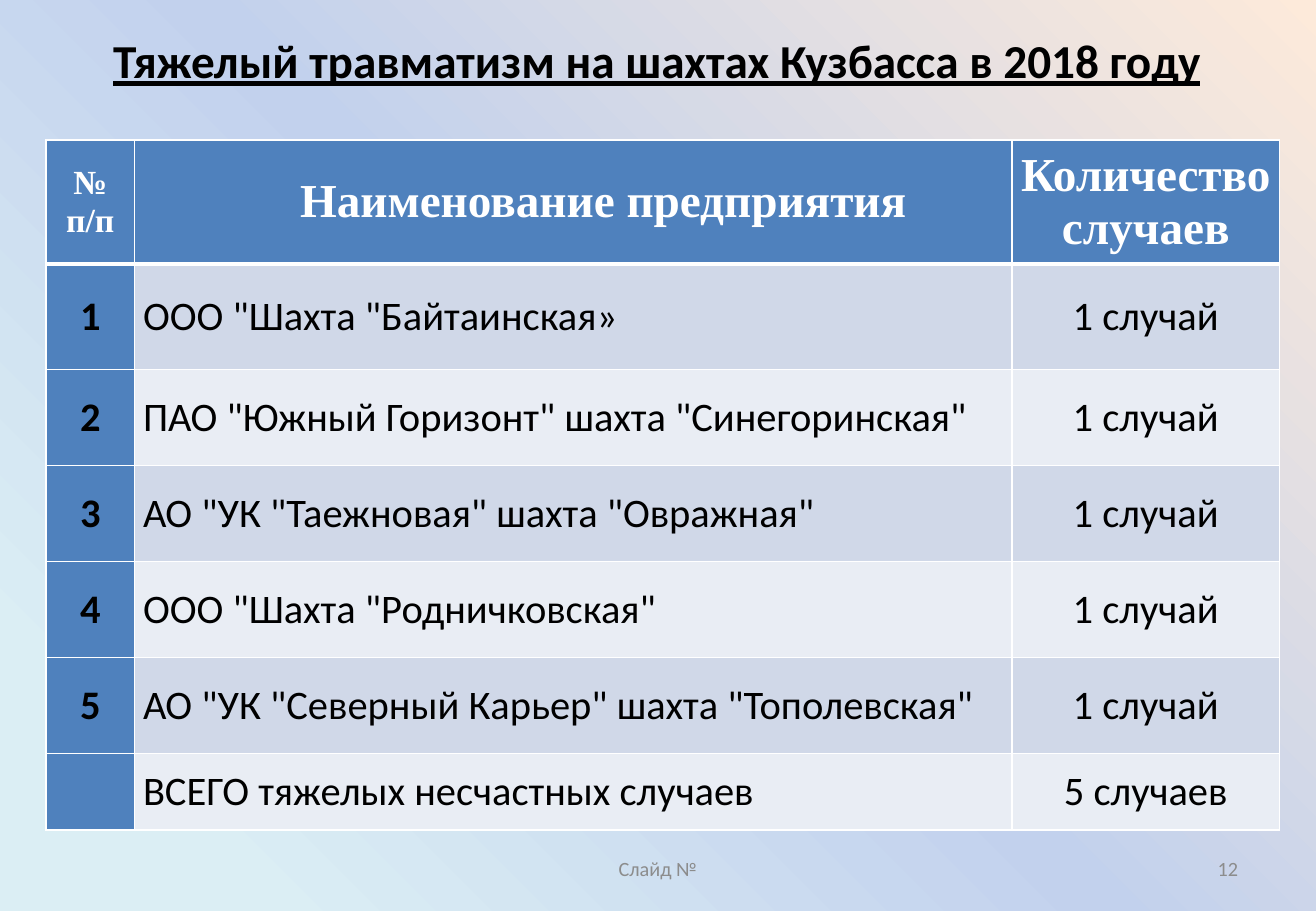
from copy import deepcopy
from dataclasses import dataclass

from lxml import etree
from pptx import Presentation
from pptx.dml.color import RGBColor
from pptx.enum import text as text_enum
from pptx.oxml import ns
from pptx.util import Pt

ALIGN = text_enum.PP_ALIGN
MIDDLE = text_enum.MSO_ANCHOR.MIDDLE


@dataclass(frozen=True)
class Theme:
    body_font: str = "Calibri"
    header_font: str = "Times New Roman"
    black: str = "000000"
    white: str = "FFFFFF"
    grey: str = "8C8C8C"
    blue: str = "4F81BD"
    bands: tuple[str, str] = ("D0D8E8", "E9EDF4")
    background: tuple[tuple[float, str], ...] = (
        (0.12, "DBEEF4"), (0.5, "C2D1ED"), (1.0, "FDEADA"))
    title_size: float = 28
    number_header_size: float = 20
    body_size: float = 24
    footer_size: float = 12


@dataclass(frozen=True)
class Box:
    left: float
    top: float
    width: float
    height: float

    def lengths(self) -> tuple[Pt, Pt, Pt, Pt]:
        return Pt(self.left), Pt(self.top), Pt(self.width), Pt(self.height)


@dataclass(frozen=True)
class Record:
    number: str
    company: str
    cases: str


@dataclass(frozen=True)
class FooterItem:
    text: str
    box: Box
    align: ALIGN


THEME = Theme()
TITLE_BOX = Box(38.2, 20.9, 702, 62.6)
TABLE_BOX = Box(27.2, 83, 731.2, 409)
COLUMN_WIDTHS = (52.6, 520, 158.6)
ROW_HEIGHTS = (73.4, 62.6, 56.9, 56.9, 56.9, 56.9, 45.4)
HEADERS = (("№ п/п", THEME.number_header_size, 0),
           ("Наименование предприятия", THEME.title_size, 35.4),
           ("Количество случаев", THEME.title_size, 0))
RECORDS = (
    Record("1", 'ООО "Шахта "Байтаинская»', "1 случай"),
    Record("2", 'ПАО "Южный Горизонт" шахта "Синегоринская"', "1 случай"),
    Record("3", 'АО "УК "Таежновая" шахта "Овражная"', "1 случай"),
    Record("4", 'ООО "Шахта "Родничковская"', "1 случай"),
    Record("5", 'АО "УК "Северный Карьер" шахта "Тополевская"', "1 случай"),
    Record("", "ВСЕГО тяжелых несчастных случаев", "5 случаев"),
)
FOOTER = (
    FooterItem("Слайд №", Box(266.4, 500.4, 247, 28.8), ALIGN.CENTER),
    FooterItem("12", Box(558.7, 500.4, 182.2, 28.8), ALIGN.RIGHT),
)


def write_text(frame, content: str, *, size: float, color: str = THEME.black,
               font: str = THEME.body_font, bold: bool = False,
               underline: bool = False, align: ALIGN = ALIGN.CENTER,
               indent: float = 0) -> None:
    paragraph = frame.paragraphs[0]
    paragraph.alignment = align
    if indent:
        paragraph._p.get_or_add_pPr().set("indent", str(Pt(indent)))
    run = paragraph.add_run()
    run.text = content
    run.font.name = font
    run.font.size = Pt(size)
    run.font.bold = bold
    run.font.underline = underline
    run.font.color.rgb = RGBColor.from_string(color)


def paint_background(slide) -> None:
    fill = slide.background.fill
    fill.gradient()
    fill.gradient_angle = 45
    stop_list = slide._element.find(".//" + ns.qn("a:gsLst"))
    stop_list.append(deepcopy(stop_list[-1]))
    for stop, (position, color) in zip(fill.gradient_stops, THEME.background):
        stop.position = position
        stop.color.rgb = RGBColor.from_string(color)


def add_title(slide) -> None:
    title = slide.shapes.title
    title.left, title.top, title.width, title.height = TITLE_BOX.lengths()
    frame = title.text_frame
    frame.word_wrap = True
    frame.vertical_anchor = MIDDLE
    frame.margin_bottom = Pt(37)  # Lifts the line to the upper half of its box
    write_text(frame, "Тяжелый травматизм на шахтах Кузбасса в 2018 году",
               size=THEME.title_size, bold=True, underline=True)


def style_cell(cell, color: str, top: float, bottom: float) -> None:
    cell.vertical_anchor = MIDDLE
    cell.margin_left = cell.margin_right = Pt(5)
    cell.margin_top = cell.margin_bottom = 0
    cell.fill.solid()
    cell.fill.fore_color.rgb = RGBColor.from_string(color)
    properties = cell._tc.get_or_add_tcPr()
    for index, (side, width) in enumerate(
            (("L", 1), ("R", 1), ("T", top), ("B", bottom))):
        line = etree.Element(ns.qn(f"a:ln{side}"), w=str(Pt(width)))
        solid = etree.SubElement(line, ns.qn("a:solidFill"))
        etree.SubElement(solid, ns.qn("a:srgbClr"), val=THEME.white)
        properties.insert(index, line)


def add_accident_table(slide) -> None:
    table = slide.shapes.add_table(
        len(ROW_HEIGHTS), len(COLUMN_WIDTHS), *TABLE_BOX.lengths()).table
    table.horz_banding = False
    for column, width in zip(table.columns, COLUMN_WIDTHS):
        column.width = Pt(width)
    for row, height in zip(table.rows, ROW_HEIGHTS):
        row.height = Pt(height)

    # Header row
    for column, (content, size, indent) in enumerate(HEADERS):
        cell = table.cell(0, column)
        style_cell(cell, THEME.blue, top=1, bottom=3)
        write_text(cell.text_frame, content, size=size, color=THEME.white,
                   font=THEME.header_font, bold=True, indent=indent)

    # Mines and total
    for row, record in enumerate(RECORDS, start=1):
        band = THEME.bands[(row - 1) % 2]
        values = (record.number, record.company, record.cases)
        for column, content in enumerate(values):
            cell = table.cell(row, column)
            style_cell(cell, THEME.blue if column == 0 else band,
                       top=3 if row == 1 else 1, bottom=1)
            if content:
                write_text(cell.text_frame, content, size=THEME.body_size,
                           bold=column == 0,
                           align=ALIGN.LEFT if column == 1 else ALIGN.CENTER)


def add_footer_item(slide, item: FooterItem) -> None:
    frame = slide.shapes.add_textbox(*item.box.lengths()).text_frame
    frame.word_wrap = True
    frame.vertical_anchor = MIDDLE
    write_text(frame, item.text, size=THEME.footer_size, color=THEME.grey,
               align=item.align)


def main() -> None:
    presentation = Presentation()
    presentation.slide_width = Pt(780)
    presentation.slide_height = Pt(540)
    title_only = presentation.slide_layouts[5]
    slide = presentation.slides.add_slide(title_only)
    paint_background(slide)
    add_title(slide)
    add_accident_table(slide)
    for item in FOOTER:
        add_footer_item(slide, item)
    presentation.save("out.pptx")


if __name__ == "__main__":
    main()
